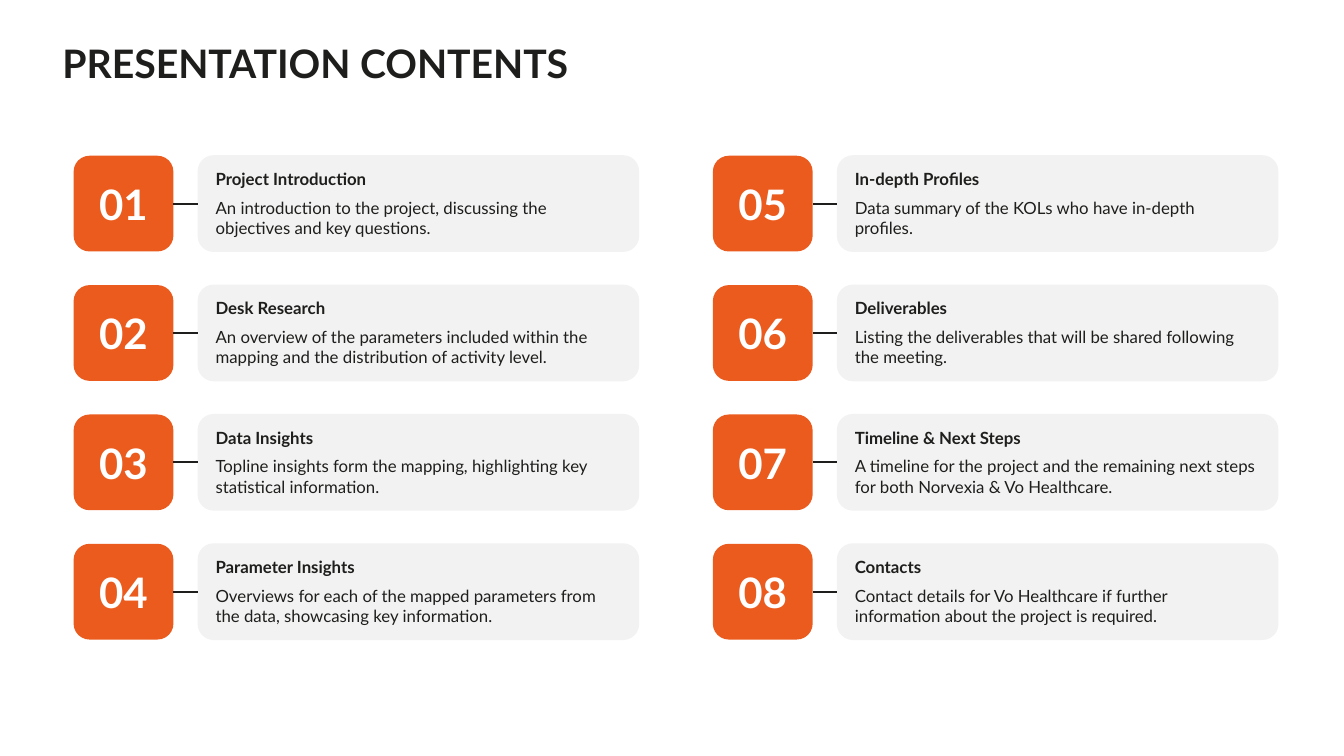
import pptx
import pptx.dml.color
import pptx.enum.shapes
import pptx.enum.text
import pptx.oxml.ns
import pptx.util
from lxml import etree

Inches = pptx.util.Inches
Pt = pptx.util.Pt
RGBColor = pptx.dml.color.RGBColor
ALIGN = pptx.enum.text.PP_ALIGN
ANCHOR = pptx.enum.text.MSO_ANCHOR

INK = RGBColor(0x1E, 0x1E, 0x1C)
ORANGE = RGBColor(0xEB, 0x5B, 0x1D)
GREY = RGBColor(0xF2, 0xF2, 0xF2)
WHITE = RGBColor(0xFF, 0xFF, 0xFF)

# Grid, in inches
COLUMN_LEFTS = (0.73, 7.07)
ROWS = 4
FIRST_TOP, LAST_TOP = 1.54, 5.39
ROW_PITCH = (LAST_TOP - FIRST_TOP) / (ROWS - 1)
TILE_W, TILE_H = 0.99, 0.95
CARD_W, CARD_H = 4.38, 0.96
CARD_OFFSET, TEXT_OFFSET = 1.23, 1.31
TEXT_W, WIDE_TEXT_W, TEXT_H = 4.13, 4.23, 0.79

# Heading, description, text width
SECTIONS = [
    ("Project Introduction", "An introduction to the project, discussing the "
     "objectives and key questions.", TEXT_W),
    ("Desk Research", "An overview of the parameters included within the "
     "mapping and the distribution of activity level.", TEXT_W),
    ("Data Insights", "Topline insights form the mapping, highlighting key "
     "statistical information.", TEXT_W),
    ("Parameter Insights", "Overviews for each of the mapped parameters from "
     "the data, showcasing key information.", TEXT_W),
    ("In-depth Profiles", "Data summary of the KOLs who have in-depth "
     "profiles.", TEXT_W),
    ("Deliverables", "Listing the deliverables that will be shared following "
     "the meeting.", TEXT_W),
    ("Timeline & Next Steps", "A timeline for the project and the remaining "
     "next steps for both Norvexia & Vo Healthcare.", WIDE_TEXT_W),
    ("Contacts", "Contact details for Vo Healthcare if further "
     "information about the project is required.", TEXT_W),
]


class Deck:
    font = "Lato"

    def __init__(self, slide):
        self.s = slide

    def run(self, p, text, size, color=INK, bold=False):
        r = p.add_run()
        r.text = text
        r.font.name = self.font
        r.font.size = Pt(size)
        r.font.bold = bold
        r.font.color.rgb = color

    def text_box(self, left, top, width, height, anchor=ANCHOR.TOP):
        sp = self.s.shapes.add_textbox(
            Inches(left), Inches(top), Inches(width), Inches(height))
        tf = sp.text_frame
        tf.word_wrap = True
        tf.vertical_anchor = anchor
        return tf

    def rounded(self, left, top, width, height, fill):
        sp = self.s.shapes.add_shape(
            pptx.enum.shapes.MSO_SHAPE.ROUNDED_RECTANGLE,
            Inches(left), Inches(top), Inches(width), Inches(height))
        sp.shadow.inherit = False
        sp.fill.solid()
        sp.fill.fore_color.rgb = fill
        sp.line.fill.background()
        return sp

    def tile(self, left, top, label):
        sp = self.rounded(left, top, TILE_W, TILE_H, ORANGE)
        tf = sp.text_frame
        tf.vertical_anchor = ANCHOR.MIDDLE
        tf.margin_left = tf.margin_right = Inches(0.1)
        tf.margin_top = tf.margin_bottom = Inches(0.1)
        p = tf.paragraphs[0]
        p.alignment = ALIGN.CENTER
        self.run(p, label, 30, WHITE, True)
        return sp

    def link(self, card, tile):
        cx = self.s.shapes.add_connector(
            pptx.enum.shapes.MSO_CONNECTOR.STRAIGHT, 0, 0, 0, 0)
        cx.begin_connect(card, 1)
        cx.end_connect(tile, 3)
        cx.line.color.rgb = INK
        cx.line.width = Pt(1.5)
        etree.SubElement(cx._element.spPr, pptx.oxml.ns.qn("a:effectLst"))

    def title(self, text):
        tf = self.text_box(0.52, 0.26, 12.28, 0.79, ANCHOR.MIDDLE)
        p = tf.paragraphs[0]
        p.line_spacing = 0.9
        self.run(p, text, 28, bold=True)

    def section(self, left, top, number, heading, description, text_width):
        card = self.rounded(left + CARD_OFFSET, top, CARD_W, CARD_H, GREY)
        tile = self.tile(left, top + (CARD_H - TILE_H) / 2, f"{number:02}")
        self.link(card, tile)
        tf = self.text_box(left + TEXT_OFFSET, top + (CARD_H - TEXT_H) / 2,
                           text_width, TEXT_H)
        self.run(tf.paragraphs[0], heading, 12, bold=True)
        p = tf.add_paragraph()
        p.space_before = Pt(6)
        self.run(p, description, 12)


def main():
    prs = pptx.Presentation()
    prs.slide_width = Inches(13.33)
    prs.slide_height = Inches(7.5)
    deck = Deck(prs.slides.add_slide(prs.slide_layouts[6]))

    # Title
    deck.title("PRESENTATION CONTENTS")

    # Numbered sections, down each column in turn
    for i, section in enumerate(SECTIONS):
        column, row = divmod(i, ROWS)
        deck.section(COLUMN_LEFTS[column], FIRST_TOP + row * ROW_PITCH,
                     i + 1, *section)

    prs.save("out.pptx")


if __name__ == "__main__":
    main()
